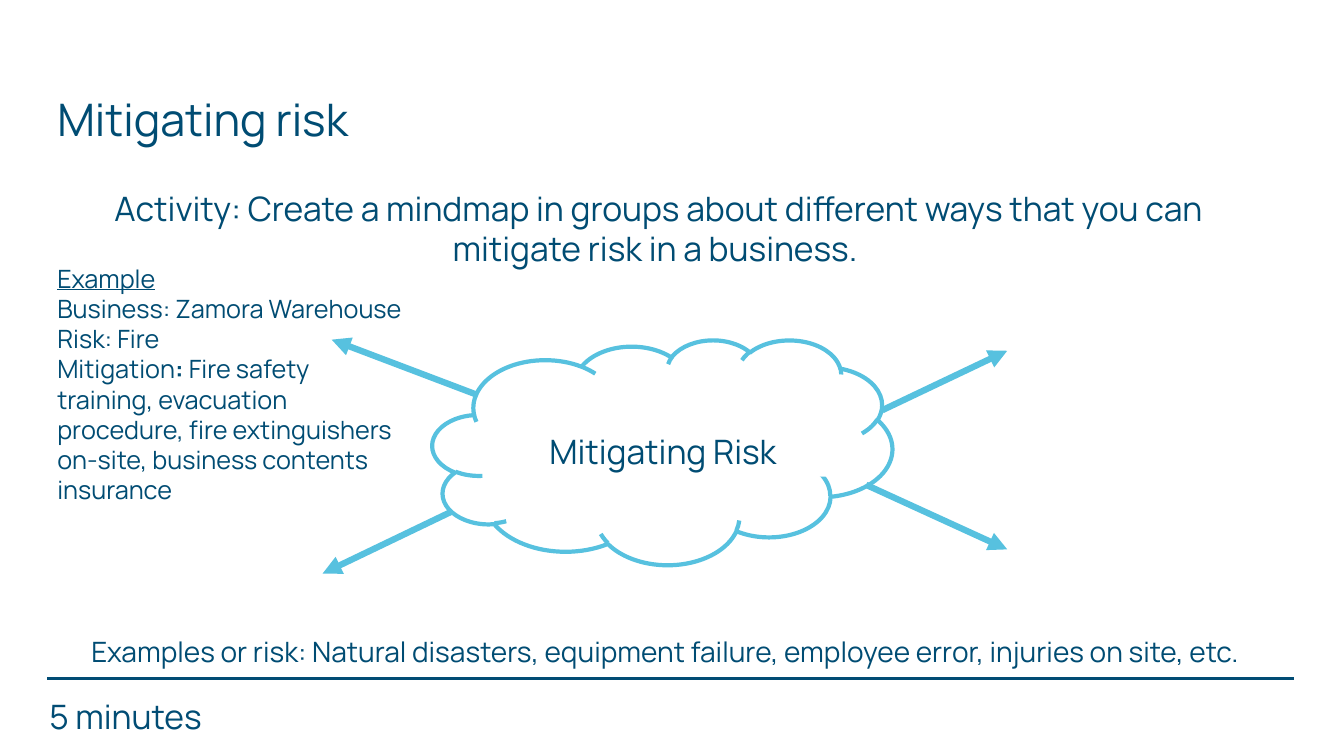
from dataclasses import dataclass

from lxml.etree import SubElement
from pptx import Presentation
from pptx.dml.color import RGBColor
from pptx.enum.shapes import MSO_CONNECTOR, MSO_SHAPE
from pptx.enum.text import MSO_ANCHOR, MSO_AUTO_SIZE, PP_ALIGN
from pptx.oxml.ns import qn
from pptx.util import Inches, Pt


@dataclass(frozen=True)
class Theme:
    font: str = "Manrope"
    ink: RGBColor = RGBColor(0x00, 0x4C, 0x73)
    footer: RGBColor = RGBColor(0x01, 0x4C, 0x74)
    accent: RGBColor = RGBColor(0x57, 0xC1, 0xDF)
    paper: RGBColor = RGBColor(0xFF, 0xFF, 0xFF)
    title: int = 32
    body: int = 24
    note: int = 20
    small: int = 18


def add_run(paragraph, text, *, font, size, color, bold=False, underline=False):
    """Append formatted text to a paragraph."""
    run = paragraph.add_run()
    run.text = text
    run.font.name = font
    run.font.size = Pt(size)
    run.font.color.rgb = color
    run.font.bold = bold
    run.font.underline = underline


class SlideBuilder:
    def __init__(self, slide, theme):
        self.slide = slide
        self.theme = theme

    def fill_text(self, frame, paragraphs, size, color=None, align=PP_ALIGN.LEFT,
                  spacing=None, anchor=MSO_ANCHOR.TOP, grow=True):
        """Fill a frame; each paragraph is a list of (text, format) pairs."""
        frame.word_wrap = True
        frame.vertical_anchor = anchor
        frame.auto_size = (MSO_AUTO_SIZE.SHAPE_TO_FIT_TEXT if grow
                           else MSO_AUTO_SIZE.NONE)
        for index, pieces in enumerate(paragraphs):
            paragraph = frame.add_paragraph() if index else frame.paragraphs[0]
            paragraph.alignment = align
            if spacing:
                paragraph.line_spacing = spacing
            for text, style in pieces:
                add_run(paragraph, text, font=self.theme.font, size=size,
                        color=color or self.theme.ink, **style)

    def text(self, box, paragraphs, size, **layout):
        frame = self.slide.shapes.add_textbox(*map(Inches, box)).text_frame
        self.fill_text(frame, paragraphs, size, **layout)

    def shape(self, kind, box, fill=None, line=None, width=0):
        shape = self.slide.shapes.add_shape(kind, *map(Inches, box))
        shape.shadow.inherit = False
        if fill is None:
            shape.fill.background()
        else:
            shape.fill.solid()
            shape.fill.fore_color.rgb = fill
        if line is None:
            shape.line.fill.background()
        else:
            shape.line.color.rgb = line
            shape.line.width = Pt(width)
        return shape

    def line(self, start, end, color, width, arrow=False):
        connector = self.slide.shapes.add_connector(
            MSO_CONNECTOR.STRAIGHT, *map(Inches, (*start, *end)))
        connector.line.color.rgb = color
        connector.line.width = Pt(width)
        properties = connector._element.spPr
        if arrow:
            SubElement(properties.find(qn("a:ln")), qn("a:tailEnd"),
                       type="triangle")
        SubElement(properties, qn("a:effectLst"))


def main():
    deck = Presentation()
    deck.slide_width, deck.slide_height = Inches(13.33), Inches(7.5)
    theme = Theme()
    page = SlideBuilder(deck.slides.add_slide(deck.slide_layouts[6]), theme)

    # Footer rule, title and task
    page.line((0.47, 6.73), (12.83, 6.73), theme.footer, 2.25)
    page.text((0.47, 0.75, 6.73, 0.92), [[("Mitigating risk", {})]], theme.title,
              spacing=0.9, anchor=MSO_ANCHOR.MIDDLE, grow=False)
    activity = ("Activity: Create a mindmap in groups about different ways "
                "that you can mitigate risk in a business. ")
    page.text((0.47, 1.81, 12.12, 0.91), [[(activity, {})]], theme.body,
              align=PP_ALIGN.CENTER)

    # Mind map: branches, cloud and its label
    branches = [
        ((4.47, 5.08), (3.2, 5.69)),
        ((4.74, 3.92), (3.29, 3.37)),
        ((8.75, 4.07), (9.99, 3.48)),
        ((8.59, 4.81), (9.99, 5.45)),
    ]
    for start, end in branches:
        page.line(start, end, theme.accent, 4.5, arrow=True)
    page.shape(MSO_SHAPE.CLOUD, (4.29, 3.37, 4.56, 2.23),
               line=theme.accent, width=3)
    topic = page.shape(MSO_SHAPE.RECTANGLE, (4.84, 4.23, 3.47, 0.5),
                       fill=theme.paper)
    page.fill_text(topic.text_frame, [[("Mitigating Risk", {})]], theme.body,
                   align=PP_ALIGN.CENTER)

    # Timing and risk examples
    page.text((0.39, 6.85, 2.38, 0.5), [[("5 minutes", {})]], theme.body,
              color=theme.footer)
    risks = ("Examples or risk: Natural disasters, equipment failure, "
             "employee error, injuries on site, etc.")
    page.text((0.17, 6.08, 12.86, 0.55), [[(risks, {})]], theme.note,
              align=PP_ALIGN.CENTER, spacing=1.5)

    # Worked example
    example = [
        [("Example", {"underline": True})],
        [("Business: Zamora Warehouse", {})],
        [("Risk: Fire", {})],
        [("Mitigation", {}), (": ", {"bold": True}), ("Fire safety", {})],
        [("training, evacuation procedure, fire extinguishers on-site, "
          "business contents insurance", {})],
    ]
    page.text((0.47, 2.56, 3.76, 2.22), example, theme.small)

    deck.save("out.pptx")


if __name__ == "__main__":
    main()
